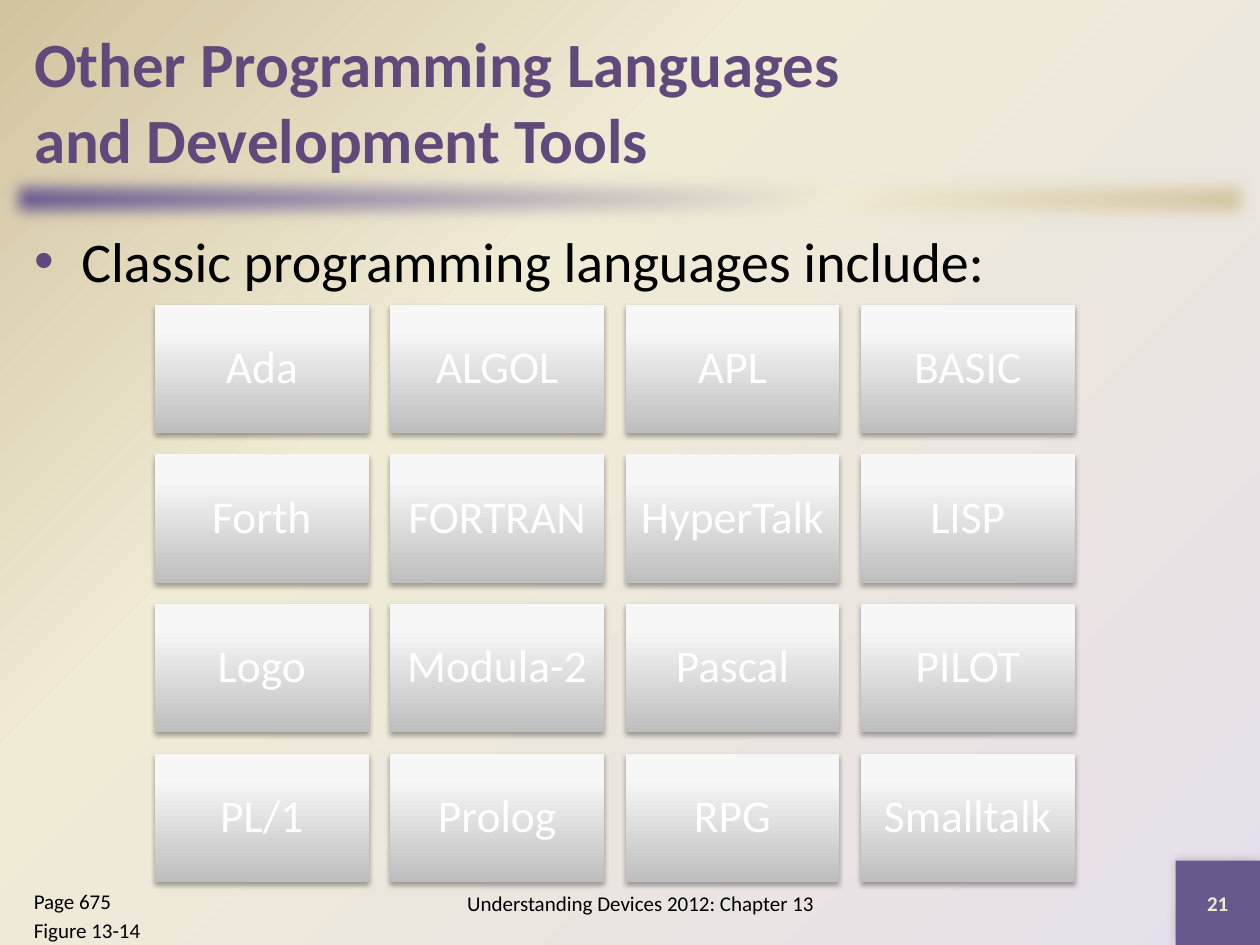
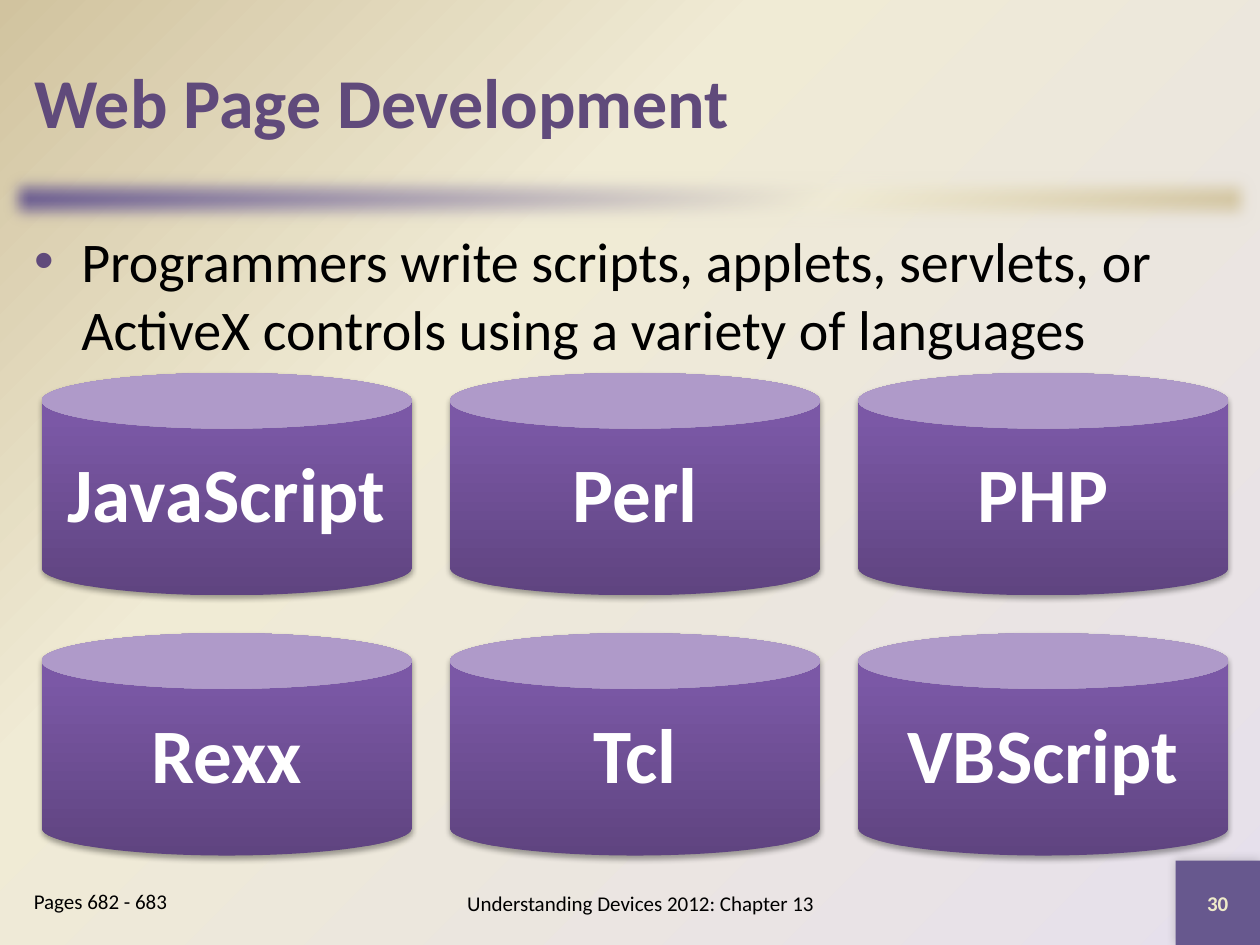
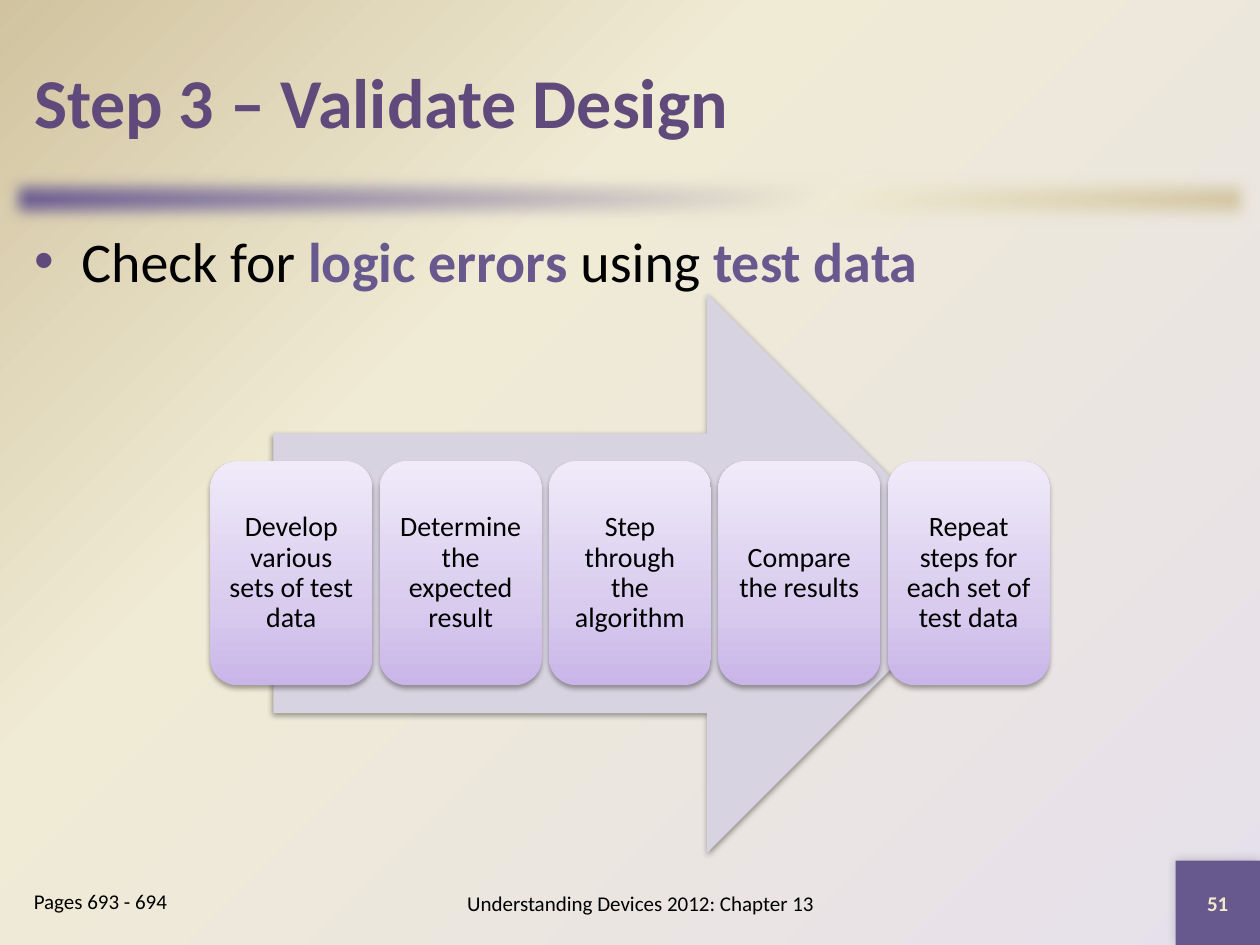
from lxml import etree
from pptx import Presentation
from pptx import util as u
from pptx.dml.color import RGBColor
from pptx.enum import shapes, text
from pptx.oxml import ns, parse_xml

KIND = shapes.MSO_SHAPE
MID = text.MSO_ANCHOR.MIDDLE
MID_X = text.PP_ALIGN.CENTER
FONT = "Calibri"
BLACK, WHITE, CREAM = "000000", "FFFFFF", "EEEBCA"
PLUM, VIOLET, LILAC = "604A7B", "67588E", "D8D3E0"
SAND = [(65, "F0EBD5"), (100, "D1C39F")]
PAGE = [(0, "E6E0EC")] + SAND
BAND = [(0, VIOLET)] + SAND
GREY = [(0, "BEBEBE"), (80, "F7F7F7"), (100, "F8F8F8")]
GRAPE = [(0, "5F4480"), (80, "7B58A6"), (100, "7C57A8")]
MIST = [(0, "C9B5E8"), (35, "D8CBEE"), (100, "F0EAF9")]
FOOT = "Understanding Devices 2012: Chapter 13"


def rgb(code):
    return RGBColor.from_string(code)


def inch(box):
    return [u.Inches(n) for n in box]


def place(shape, box):
    shape.left, shape.top, shape.width, shape.height = inch(box)


def blend(fill, root, stops, angle=None):
    """Fill with colour stops: linear at an angle, or round from the lower right."""
    fill.gradient()
    old = next(root.iter(ns.qn("a:gradFill")))
    marks = "".join(f'<a:gs pos="{pos * 1000}"><a:srgbClr val="{code}"/></a:gs>'
                    for pos, code in stops)
    if angle is None:
        way = ('<a:path path="circle"><a:fillToRect l="100000" t="100000"/></a:path>'
               '<a:tileRect r="-100000" b="-100000"/>')
    else:
        way = f'<a:lin ang="{angle * 60000}" scaled="0"/>'
    new = parse_xml(f'<a:gradFill {ns.nsdecls("a")} rotWithShape="1">'
                    f'<a:gsLst>{marks}</a:gsLst>{way}</a:gradFill>')
    old.getparent().replace(old, new)


def effect(shape, name, **attrs):
    shape.shadow.inherit = False
    group = next(shape.element.iter(ns.qn("a:effectLst")))
    return etree.SubElement(group, ns.qn(name), {k: str(v) for k, v in attrs.items()})


def shade(shape, alpha, blur, dist, angle):
    drop = effect(shape, "a:outerShdw", blurRad=u.Pt(blur), dist=u.Pt(dist),
                  dir=angle * 60000, rotWithShape=0)
    tone = etree.SubElement(drop, ns.qn("a:srgbClr"), val=BLACK)
    etree.SubElement(tone, ns.qn("a:alpha"), val=str(alpha * 1000))


def draw(slide, kind, box, fill, angle=270):
    """Add an unlined shape; fill is a hex colour or a list of stops."""
    shape = slide.shapes.add_shape(kind, *inch(box))
    if isinstance(fill, str):
        shape.fill.solid()
        shape.fill.fore_color.rgb = rgb(fill)
    else:
        blend(shape.fill, shape.element, fill, angle)
    shape.line.fill.background()
    return shape


def write(para, words, size, color, bold=False):
    """Add runs to a paragraph, breaking the line at each newline."""
    for i, line in enumerate(words.split("\n")):
        if i:
            para.add_line_break()
        run = para.add_run()
        run.text = line
        font = run.font
        font.name, font.size, font.bold = FONT, u.Pt(size), bold
        font.color.rgb = rgb(color)


def label(slide, box, lines, color=BLACK, bold=False, mid=True):
    frame = slide.shapes.add_textbox(*inch(box)).text_frame
    frame.word_wrap = True
    if mid:
        frame.vertical_anchor = MID
    for i, line in enumerate(lines):
        para = frame.add_paragraph() if i else frame.paragraphs[0]
        if mid:
            para.alignment = MID_X
        else:
            para.space_before = u.Pt(2.4)
        write(para, line, 12, color, bold)


def tile(slide, kind, box, fill, words, size, color, pad, bold=False):
    shape = draw(slide, kind, box, fill)
    shade(shape, 35, 3.1, 1.8, 90)
    frame = shape.text_frame
    frame.word_wrap = True
    frame.vertical_anchor = MID
    frame.margin_left = frame.margin_right = u.Inches(pad)
    frame.margin_top = frame.margin_bottom = u.Inches(pad)
    para = frame.paragraphs[0]
    para.alignment, para.line_spacing = MID_X, 0.9
    write(para, words, size, color, bold)


def grid(slide, box, cols, gap, names, *, kind, **look):
    """Share the box among tiles in rows, with equal gaps."""
    left, top, width, height = box
    rows = -(-len(names) // cols)
    wide = (width - gap * (cols - 1)) / cols
    high = (height - gap * (rows - 1)) / rows
    for i, name in enumerate(names):
        row, col = divmod(i, cols)
        spot = (left + col * (wide + gap), top + row * (high + gap), wide, high)
        tile(slide, kind, spot, words=name, **look)


def theme(deck, slide):
    """Give the master its background, band, corner and placeholder boxes."""
    master = deck.slide_master
    blend(master.background.fill, master.element, PAGE)
    band = draw(slide, KIND.RECTANGLE, (0, 1.33, 10, 0.5), BAND, 45)
    effect(band, "a:softEdge", rad=u.Pt(10))
    corner = draw(slide, KIND.RECTANGLE, (9.33, 6.83, 0.67, 0.67), VIOLET)
    shade(corner, 20, 6, 0, 225)
    title, body = master.placeholders[0], master.placeholders[1]
    for num, part in enumerate((band, corner), 20):
        part.element.xpath("./p:nvSpPr/p:cNvPr")[0].set("id", str(num))
        title.element.addprevious(part.element)
    place(title, (0.17, 0.17, 9.67, 1.25))
    place(body, (0.17, 1.75, 9.67, 5.08))


def page(deck, title, size, point, refs, number):
    """Add a slide with its title, one bullet made of (words, strong) and footers."""
    slide = deck.slides.add_slide(deck.slide_layouts[1])
    head, body = slide.shapes.title, slide.placeholders[1]
    for part in (head, body):
        part.text_frame.auto_size = text.MSO_AUTO_SIZE.NONE
    head.text_frame.vertical_anchor = MID
    para = head.text_frame.paragraphs[0]
    para.alignment = text.PP_ALIGN.LEFT
    write(para, title, size, PLUM, True)
    para = body.text_frame.paragraphs[0]
    for words, strong in point:
        write(para, words, 32, VIOLET if strong else BLACK, strong)
    dot = etree.SubElement(para._p.get_or_add_pPr(), ns.qn("a:buClr"))
    etree.SubElement(dot, ns.qn("a:srgbClr"), val=PLUM)
    label(slide, (3, 6.92, 4.17, 0.5), [FOOT])
    label(slide, (9.33, 6.83, 0.67, 0.67), [number], CREAM, True)
    label(slide, (0.17, 7, 1.83, 0.5), refs, mid=False)
    return slide


def flow(slide, box, steps):
    """Lay a row of steps over a wide arrow."""
    left, top, width, height = box
    inset = width * 0.075
    arrow = draw(slide, KIND.RIGHT_ARROW,
                 (left + inset, top, width - 2 * inset, height), LILAC)
    shade(arrow, 38, 3.1, 1.6, 90)
    row = (left, top + height * 0.3, width, height * 0.4)
    grid(slide, row, len(steps), 0.06, steps, kind=KIND.ROUNDED_RECTANGLE,
         fill=MIST, size=16, color=BLACK, pad=0.07)


def main():
    deck = Presentation()
    deck.slide_width, deck.slide_height = u.Inches(10), u.Inches(7.5)

    slide = page(deck, "Other Programming Languages \nand Development Tools", 36,
                 [("Classic programming languages include:", False)],
                 ["Page 675", "Figure 13-14"], "21")
    theme(deck, slide)
    grid(slide, (1.23, 2.42, 7.3, 4.58), 4, 0.17,
         ["Ada", "ALGOL", "APL", "BASIC", "Forth", "FORTRAN", "HyperTalk", "LISP",
          "Logo", "Modula-2", "Pascal", "PILOT", "PL/1", "Prolog", "RPG", "Smalltalk"],
         kind=KIND.RECTANGLE, fill=GREY, size=26, color=WHITE, pad=0.11)

    slide = page(deck, "Web Page Development", 40,
                 [("Programmers write scripts, applets, servlets, or ActiveX "
                   "controls using a variety of languages", False)],
                 ["Pages 682 - 683"], "30")
    grid(slide, (0.33, 2.96, 9.42, 3.83), 3, 0.3,
         ["JavaScript", "Perl", "PHP", "Rexx", "Tcl", "VBScript"],
         kind=KIND.CAN, fill=GRAPE, size=44, color=WHITE, pad=0.18, bold=True)

    slide = page(deck, "Step 3 – Validate Design", 40,
                 [("Check for ", False), ("logic errors ", True),
                  ("using ", False), ("test data", True)],
                 ["Pages 693 - 694"], "51")
    flow(slide, (1.67, 2.33, 6.66, 4.44),
         ["Develop various sets of test data", "Determine the expected result",
          "Step through the algorithm", "Compare the results",
          "Repeat steps for each set of test data"])
    deck.save("out.pptx")


if __name__ == "__main__":
    main()
